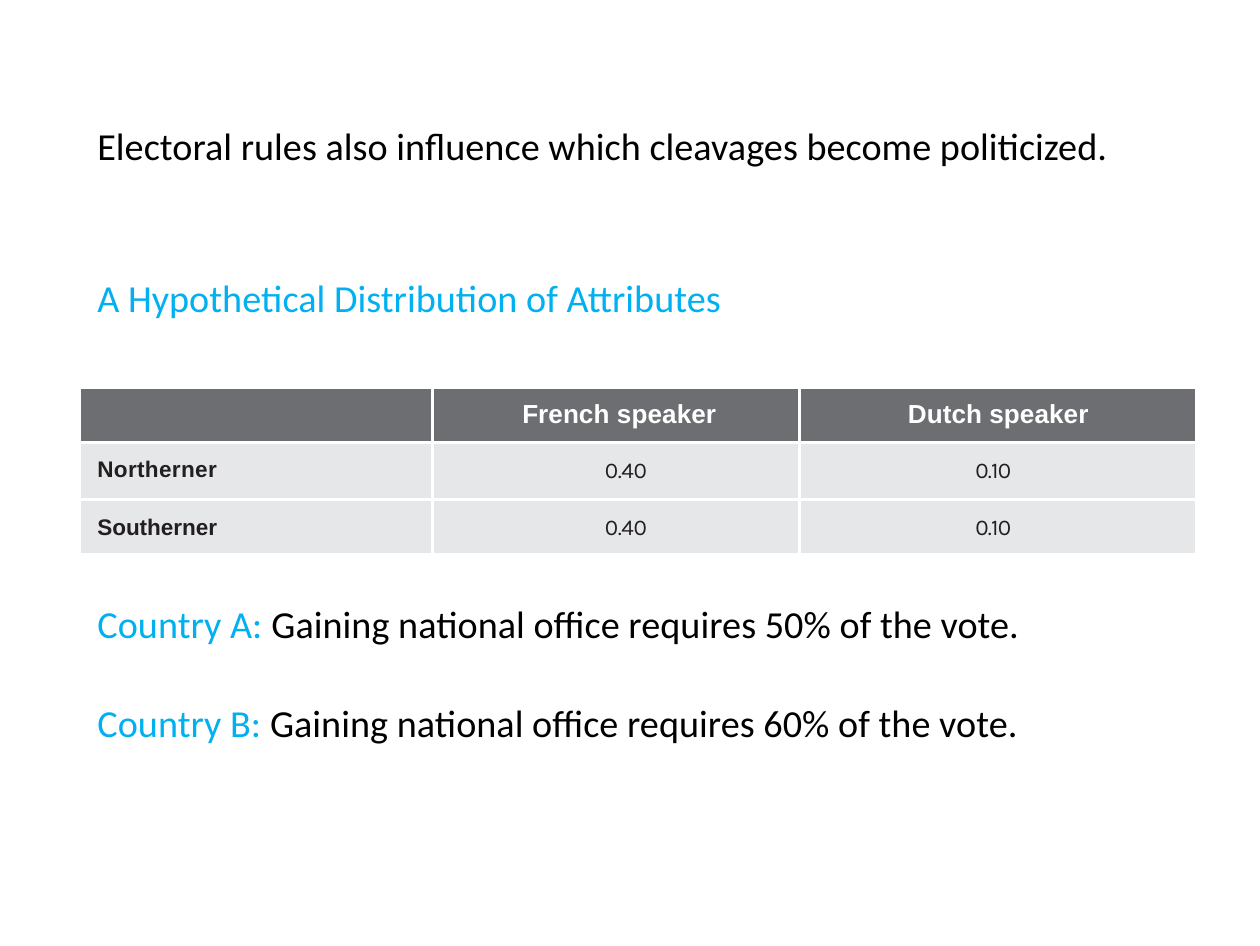
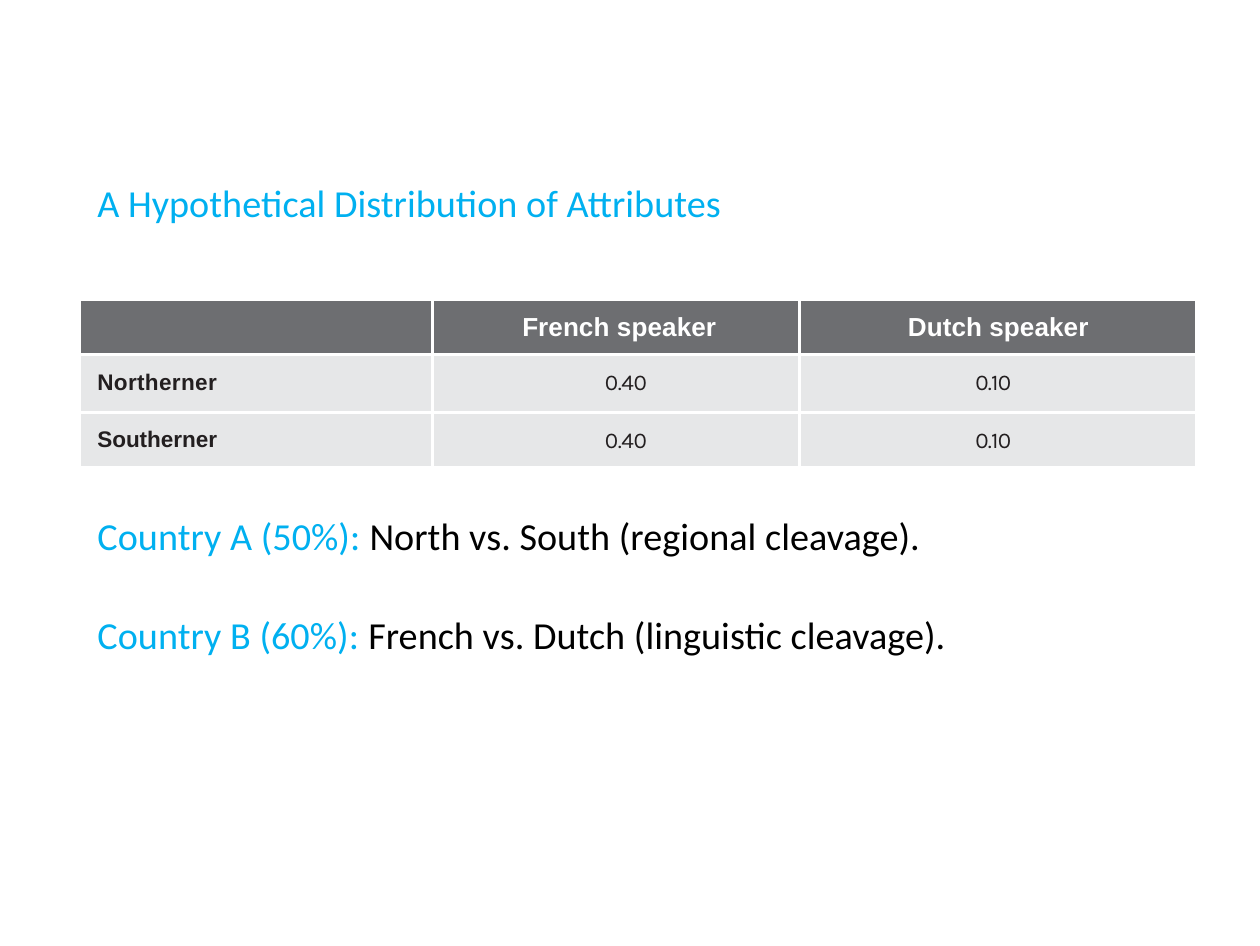
from dataclasses import dataclass, replace

from lxml.etree import SubElement
from pptx import Presentation
from pptx.dml.color import RGBColor
from pptx.enum.text import MSO_AUTO_SIZE, PP_ALIGN
from pptx.oxml.ns import qn
from pptx.util import Inches, Pt


@dataclass(frozen=True)
class Theme:
    body_font: str = "Calibri"
    label_font: str = "Arial"
    value_font: str = "Karla"
    body_size: float = 11
    header_size: float = 7.5
    cell_size: float = 6.5
    black: str = "000000"
    accent: str = "00B0F0"
    white: str = "FFFFFF"
    header_fill: str = "6D6E71"
    row_fill: str = "E6E7E8"
    cell_text: str = "231F20"


@dataclass(frozen=True)
class CellStyle:
    font: str
    size: float
    color: str
    bold: bool = False
    spacing: int = 0
    left: float = 0
    right: float = 0
    align: PP_ALIGN = PP_ALIGN.CENTER


THEME = Theme()
POINTS_PER_INCH = 72
SLIDE_WIDTH = 363 / POINTS_PER_INCH
SLIDE_HEIGHT = 272.5 / POINTS_PER_INCH
TEXT_LEFT = 0.38
TABLE_LEFT = 0.32
COLUMN_WIDTHS = (1.41, 1.47, 1.59)
ROW_HEIGHTS = (0.22, 0.23, 0.22)
TOP_MARGINS = (0.05, 0.06, 0.06)
HEADING_GAP = 30.6
COUNTRY_GAP = 15.3

HEADING = "A Hypothetical Distribution of Attributes"
ATTRIBUTES = (
    ("", "French speaker", "Dutch speaker"),
    ("Northerner", "0.40", "0.10"),
    ("Southerner", "0.40", "0.10"),
)

HEADER = CellStyle(THEME.label_font, THEME.header_size, THEME.white, bold=True)
LABEL = CellStyle(THEME.label_font, THEME.cell_size, THEME.cell_text, bold=True,
                  left=0.07, align=PP_ALIGN.LEFT)
VALUE = CellStyle(THEME.value_font, THEME.cell_size, THEME.cell_text)
VALUES = (replace(VALUE, spacing=-10, left=0.08),
          replace(VALUE, spacing=-20, right=0.04))
STYLES = (
    (HEADER, replace(HEADER, left=0.36, align=PP_ALIGN.LEFT), HEADER),
    (replace(LABEL, spacing=10), *VALUES),
    (LABEL, *VALUES),
)


class SlideBuilder:
    def __init__(self, deck, theme):
        self.deck = deck
        self.theme = theme
        self.page = None

    def new_page(self):
        self.page = self.deck.slides.add_slide(self.deck.slide_layouts[6])

    def format_span(self, span, font, size, color, bold=False):
        span.font.name = font
        span.font.size = Pt(size)
        span.font.bold = bold
        span.font.color.rgb = RGBColor.from_string(color)

    def text(self, top, width, height, lines, gap=0):
        box = self.page.shapes.add_textbox(
            Inches(TEXT_LEFT), Inches(top), Inches(width), Inches(height))
        frame = box.text_frame
        frame.word_wrap = True
        frame.auto_size = MSO_AUTO_SIZE.SHAPE_TO_FIT_TEXT
        frame.margin_left = frame.margin_top = Inches(0.01)
        frame.margin_right = frame.margin_bottom = 0
        for index, line in enumerate(lines):
            para = frame.add_paragraph() if index else frame.paragraphs[0]
            if index:
                para.space_before = Pt(gap)
            for words, color in line:
                span = para.add_run()
                span.text = words
                self.format_span(span, self.theme.body_font, self.theme.body_size, color)

    def heading(self, top):
        self.text(top, 2.63, 0.2, [[(HEADING, self.theme.accent)]])

    def countries(self, top, width, rules):
        lines = [[(name, self.theme.accent), (rule, self.theme.black)]
                 for name, rule in rules]
        self.text(top, width, 0.59, lines, COUNTRY_GAP)

    def border(self, cell, side):
        line = SubElement(cell._tc.get_or_add_tcPr(), qn(f"a:ln{side}"), w=str(Pt(1)))
        fill = SubElement(line, qn("a:solidFill"))
        SubElement(fill, qn("a:srgbClr"), val=self.theme.white)

    def cell(self, cell, words, style, fill, top_margin):
        cell.margin_left = Inches(style.left)
        cell.margin_right = Inches(style.right)
        cell.margin_top = Inches(top_margin)
        cell.margin_bottom = 0
        cell.fill.solid()
        cell.fill.fore_color.rgb = RGBColor.from_string(fill)
        para = cell.text_frame.paragraphs[0]
        para.text = words
        para.alignment = style.align
        for span in para.runs:
            self.format_span(span, style.font, style.size, style.color, style.bold)
            span.font._element.set("spc", str(style.spacing))
        if not words:
            SubElement(para._p, qn("a:endParaRPr"), sz=str(Pt(style.size).centipoints))

    def table(self, top):
        frame = self.page.shapes.add_table(
            len(ROW_HEIGHTS), len(COLUMN_WIDTHS), Inches(TABLE_LEFT), Inches(top),
            Inches(sum(COLUMN_WIDTHS)), Inches(sum(ROW_HEIGHTS)))
        table = frame.table
        table.first_row = table.horz_banding = False
        for column, width in zip(table.columns, COLUMN_WIDTHS):
            column.width = Inches(width)
        for row, height in zip(table.rows, ROW_HEIGHTS):
            row.height = Inches(height)
        last_row, last_column = len(ROW_HEIGHTS) - 1, len(COLUMN_WIDTHS) - 1
        for r, (texts, styles) in enumerate(zip(ATTRIBUTES, STYLES)):
            fill = self.theme.row_fill if r else self.theme.header_fill
            for c, (words, style) in enumerate(zip(texts, styles)):
                cell = table.cell(r, c)
                inner = (("L", c > 0), ("R", c < last_column),
                         ("T", r > 0), ("B", r < last_row))
                for side, shown in inner:
                    if shown:
                        self.border(cell, side)
                self.cell(cell, words, style, fill, TOP_MARGINS[r])


def main():
    deck = Presentation()
    deck.slide_width = Inches(SLIDE_WIDTH)
    deck.slide_height = Inches(SLIDE_HEIGHT)
    builder = SlideBuilder(deck, THEME)

    builder.new_page()
    builder.text(0.48, 4.13, 0.8, [
        [("Electoral rules also influence which cleavages become politicized.", THEME.black)],
        [(HEADING, THEME.accent)],
    ], HEADING_GAP)
    builder.table(1.55)
    builder.countries(2.39, 3.85, [
        ("Country A: ", "Gaining national office requires 50% of the vote."),
        ("Country B: ", "Gaining national office requires 60% of the vote."),
    ])

    builder.new_page()
    builder.heading(0.71)
    builder.table(1.2)
    builder.countries(2.04, 3.69, [
        ("Country A (50%): ", "North vs. South (regional cleavage)."),
        ("Country B (60%): ", "French vs. Dutch (linguistic cleavage)."),
    ])

    deck.save("out.pptx")


if __name__ == "__main__":
    main()
